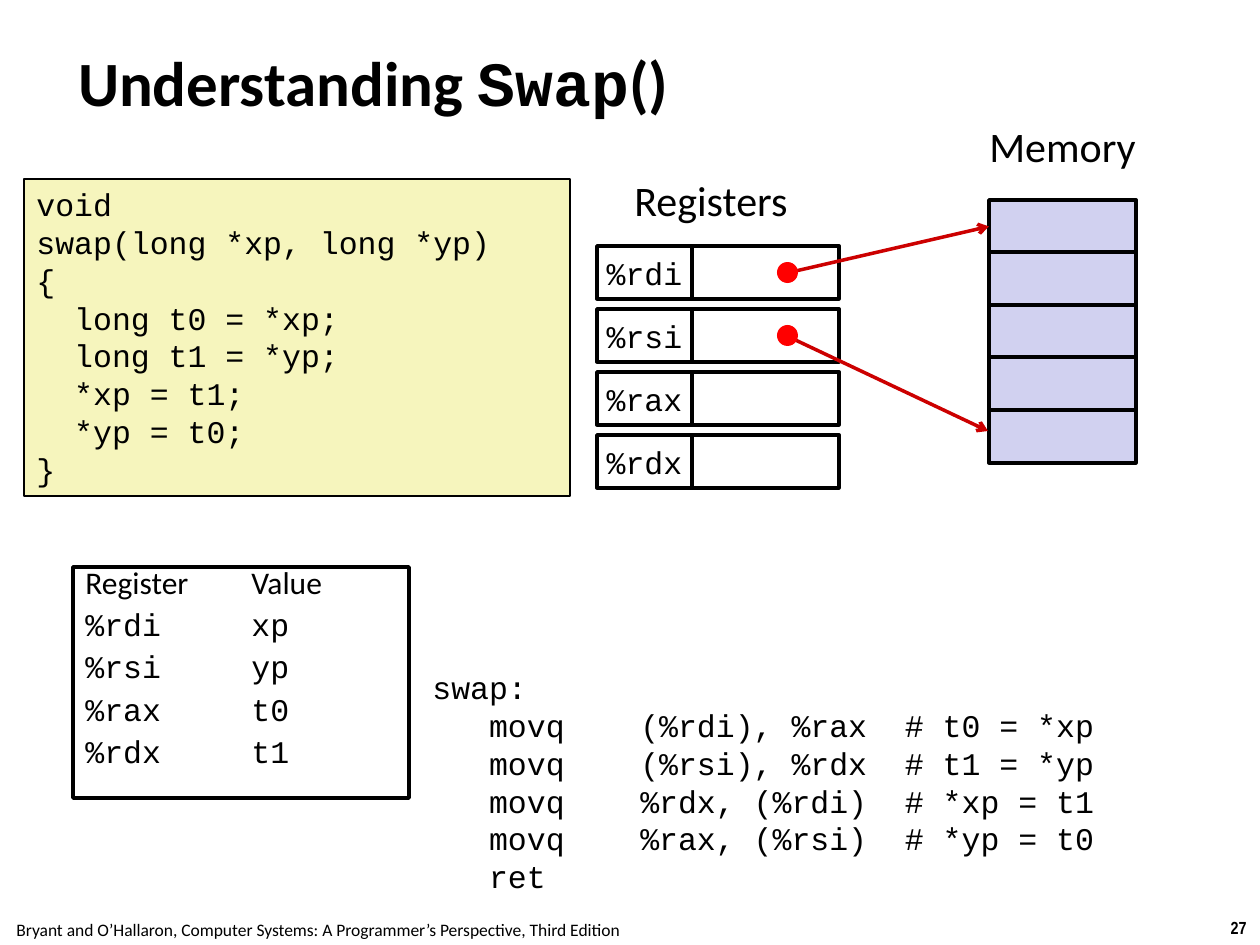
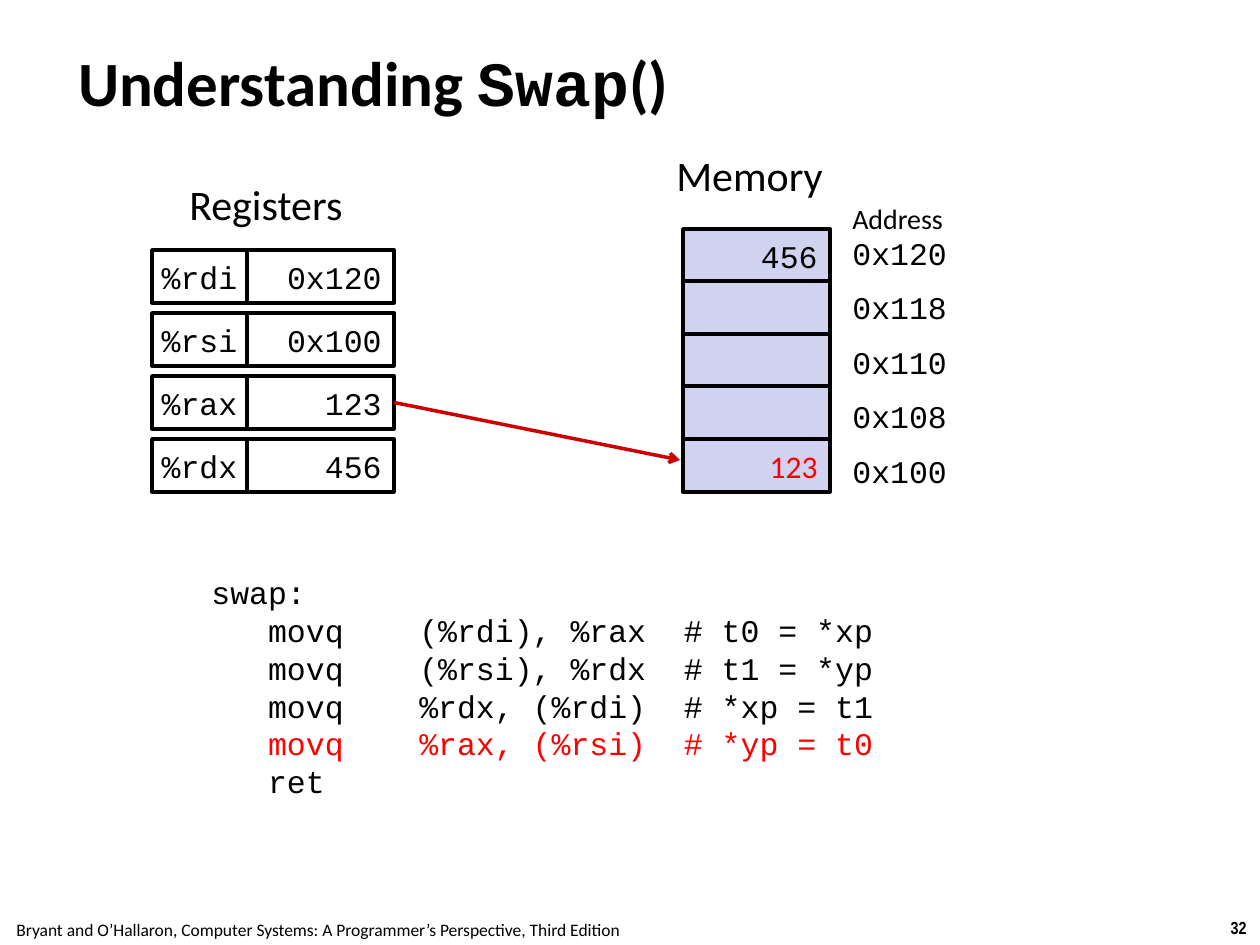
from dataclasses import dataclass

from lxml.etree import SubElement
from pptx import Presentation
from pptx.dml.color import RGBColor
from pptx.enum.shapes import MSO_CONNECTOR as Connector, MSO_SHAPE as Shape
from pptx.enum.text import MSO_ANCHOR as Anchor, PP_ALIGN as Align
from pptx.oxml.ns import qn
from pptx.util import Emu, Pt

BLACK, WHITE, RED, ARROW_RED = "000000", "FFFFFF", "FF0000", "CC0000"
CODE_YELLOW, MEMORY_BLUE = "F6F5BD", "D1D1F0"
SANS, MONO, NARROW = "Calibri", "Courier New", "Arial Narrow"
PX_PER_INCH = 126
LEFT_SIDE, RIGHT_SIDE = 1, 3

FOOTER = "Bryant and O’Hallaron, Computer Systems: A Programmer’s Perspective, Third Edition"
TITLE = [("Understanding ", SANS), ("Swap", MONO), ("()", SANS)]
REGISTERS = ["%rdi", "%rsi", "%rax", "%rdx"]
VARIABLES = ["xp", "yp", "t0", "t1"]
ADDRESSES = ["0x120", "0x118", "0x110", "0x108", "0x100"]
C_CODE = [
    "void",
    "swap(long *xp, long *yp)",
    "{",
    "  long t0 = *xp;",
    "  long t1 = *yp;",
    "  *xp = t1;",
    "  *yp = t0;",
    "}",
]
ASSEMBLY = [
    "swap:",
    "   movq    (%rdi), %rax  # t0 = *xp",
    "   movq    (%rsi), %rdx  # t1 = *yp",
    "   movq    %rdx, (%rdi)  # *xp = t1",
    "   movq    %rax, (%rsi)  # *yp = t0",
    "   ret",
]


@dataclass
class Box:
    """A rectangle in px."""

    left: int
    top: int
    width: int
    height: int

    def inside(self, left, top, width, height):
        """Return a box placed relative to this one."""
        return Box(self.left + left, self.top + top, width, height)

    def emu(self):
        """Return the four lengths in EMU."""
        return [px(n) for n in (self.left, self.top, self.width, self.height)]


def px(length):
    """Turn px into EMU."""
    return Emu(round(length * 914400 / PX_PER_INCH))


def color(value):
    """Turn a hex string into a colour."""
    return RGBColor.from_string(value)


def style(span, font=SANS, size=18, ink=BLACK, bold=False):
    """Format one run."""
    span.font.name, span.font.size, span.font.bold = font, Pt(size), bold
    span.font.color.rgb = color(ink)


def write(frame, lines, align=Align.LEFT, anchor=Anchor.TOP, wrap=True, **look):
    """Fill a text frame with equally formatted lines."""
    frame.text = "\n".join(lines)
    frame.word_wrap, frame.vertical_anchor = wrap, anchor
    for para in frame.paragraphs:
        para.alignment = align
        for span in para.runs:
            style(span, **look)


def add_text(page, box, lines, **look):
    """Add a text box."""
    frame = page.shapes.add_textbox(*box.emu()).text_frame
    write(frame, lines, **look)
    return frame


def add_block(page, box, fill=None, line=2, kind=Shape.RECTANGLE):
    """Add a shape with a black outline, or none when line is 0."""
    shape = page.shapes.add_shape(kind, *box.emu())
    shape.shadow.inherit = False
    if fill:
        shape.fill.solid()
        shape.fill.fore_color.rgb = color(fill)
    else:
        shape.fill.background()
    if line:
        shape.line.color.rgb = color(BLACK)
        shape.line.width = Pt(line)
    else:
        shape.line.fill.background()
    return shape


def add_cell(page, box, fill, text, align=Align.RIGHT, **look):
    """Add an outlined cell with its value."""
    cell = add_block(page, box, fill)
    if text:
        write(cell.text_frame, [text], align, Anchor.MIDDLE, False, **{"font": MONO, **look})
    return cell


def add_arrow(page, start, end, source=None, target=None):
    """Add a red arrow, joined to the cells given."""
    arrow = page.shapes.add_connector(Connector.STRAIGHT, *map(px, start + end))
    if source:
        arrow.begin_connect(source, RIGHT_SIDE)
    if target:
        arrow.end_connect(target, LEFT_SIDE)
    arrow.line.color.rgb = color(ARROW_RED)
    arrow.line.width = Pt(2)
    SubElement(arrow.line._get_or_add_ln(), qn("a:tailEnd"), type="arrow")
    SubElement(arrow._element.spPr, qn("a:effectLst"))


def add_page(deck, number):
    """Add a page with the shared title, footer and page number."""
    page = deck.slides.add_slide(deck.slide_layouts[6])
    add_text(page, Box(1217, 911, 43, 34), [str(number)], align=Align.CENTER,
             wrap=False, font=NARROW, size=10, bold=True)
    add_text(page, Box(-2, 913, 640, 34), [FOOTER], align=Align.CENTER, wrap=False, size=10)
    frame = add_text(page, Box(73, 42, 878, 79), [], anchor=Anchor.MIDDLE)
    frame.margin_left = frame.margin_right = frame.margin_top = frame.margin_bottom = px(5)
    for text, font in TITLE:
        span = frame.paragraphs[0].add_run()
        span.text = text
        style(span, font, 36, bold=True)
    return page


def add_registers(page, box, values):
    """Add the heading, register names and values; return the value cells."""
    name_width, height, step = 95, 53, 63
    add_text(page, box.inside(25, -78, 186, 63), ["Registers"], wrap=False, size=24)
    cells = []
    for row, (name, value) in enumerate(zip(REGISTERS, values)):
        add_cell(page, box.inside(0, row * step, name_width, height), WHITE, name, Align.CENTER)
        value_box = box.inside(name_width, row * step, box.width - name_width, height)
        cells.append(add_cell(page, value_box, WHITE, value))
    return cells


def add_memory(page, box, heading_left, values, last_look):
    """Add the heading and the stack of memory cells; return the cells."""
    add_text(page, box.inside(heading_left, -86, 176, 63), ["Memory"], wrap=False, size=24)
    cells = []
    for row, value in enumerate(values):
        cell_box = box.inside(0, row * box.height // len(values), box.width, 53)
        look = last_look if row == len(values) - 1 else {}
        cells.append(add_cell(page, cell_box, MEMORY_BLUE, value, **look))
    return cells


def add_addresses(page, box):
    """Add the address heading and one address beside each memory cell."""
    for row, address in enumerate(ADDRESSES):
        top = row * box.height // (len(ADDRESSES) - 1)
        add_text(page, box.inside(0, top, box.width, 50), [address], font=MONO)
    add_text(page, box.inside(0, -33, box.width, 46), ["Address"], size=16)


def add_register_uses(page, box):
    """Add the framed list of registers and the variables they hold."""
    lines = ["Register\tValue"] + [f"{name}\t{use}" for name, use in zip(REGISTERS, VARIABLES)]
    frame = add_block(page, box).text_frame
    write(frame, lines, font=MONO)
    for para in frame.paragraphs:
        para.line_spacing = 0.7
        properties = para._p.get_or_add_pPr()
        SubElement(SubElement(properties, qn("a:spcBef")), qn("a:spcPct"), val="50000")
        SubElement(SubElement(properties, qn("a:tabLst")), qn("a:tab"), pos=str(px(166)), algn="l")
    for span in frame.paragraphs[0].runs:
        style(span)


def add_assembly(page, box, current=None):
    """Add the assembly listing, with the current line in red."""
    frame = add_text(page, box, ASSEMBLY, font=MONO)
    if current is not None:
        for span in frame.paragraphs[current].runs:
            style(span, MONO, ink=RED)


def build_overview(deck):
    """Build the page that shows the code and its pointers."""
    page = add_page(deck, 27)
    code = add_block(page, Box(24, 179, 546, 317), CODE_YELLOW, 1)
    write(code.text_frame, C_CODE, font=MONO)
    add_registers(page, Box(597, 246, 242, 242), [""] * 4)
    memory = add_memory(page, Box(989, 200, 147, 263), -12, [""] * 5, {})
    add_register_uses(page, Box(73, 567, 336, 231))
    add_assembly(page, Box(420, 662, 809, 242))
    add_arrow(page, (787, 273), (989, 227), target=memory[0])
    add_arrow(page, (787, 336), (988, 431))
    for top in (262, 325):
        add_block(page, Box(777, top, 21, 21), RED, 0, Shape.OVAL)


def build_store_step(deck):
    """Build the page that shows the last store to memory."""
    page = add_page(deck, 32)
    memory = Box(683, 229, 147, 263)
    add_memory(page, memory, -19, ["456", "", "", "", "123"], {"font": SANS, "ink": RED})
    registers = add_registers(page, Box(152, 250, 242, 242), ["0x120", "0x100", "123", "456"])
    add_arrow(page, (394, 402), (680, 460), source=registers[2])
    add_assembly(page, Box(199, 567, 809, 242), current=4)
    add_addresses(page, memory.inside(157, -1, 168, 218))


def main():
    """Build and save the deck."""
    deck = Presentation()
    deck.slide_width, deck.slide_height = px(1260), px(945)
    build_overview(deck)
    build_store_step(deck)
    deck.save("out.pptx")


if __name__ == "__main__":
    main()
